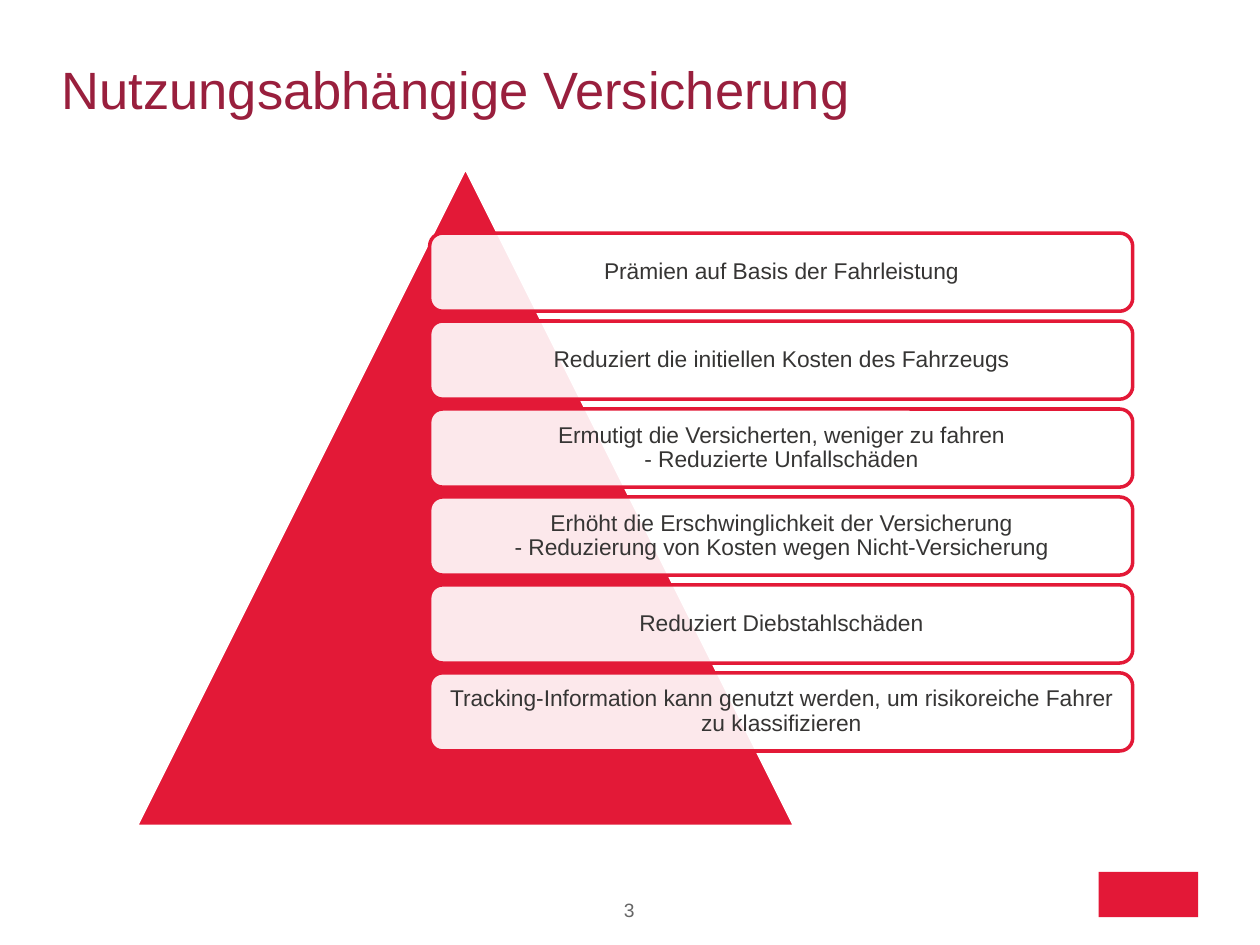
import pptx
import pptx.util
import pptx.dml.color
import pptx.enum.shapes
import pptx.enum.text
import pptx.oxml
import pptx.oxml.ns

Inches = pptx.util.Inches
Pt = pptx.util.Pt
SHAPE = pptx.enum.shapes.MSO_SHAPE
ALIGN = pptx.enum.text.PP_ALIGN
ANCHOR = pptx.enum.text.MSO_ANCHOR

COLORS = {
    "title": "991F3D",
    "red": "E31937",
    "logo": "E31837",
    "white": "FFFFFF",
    "text": "363534",
    "number": "666666",
}

BENEFITS = [
    ["Prämien auf Basis der Fahrleistung"],
    ["Reduziert die initiellen Kosten des Fahrzeugs"],
    ["Ermutigt die Versicherten, weniger zu fahren",
     "- Reduzierte Unfallschäden"],
    ["Erhöht die Erschwinglichkeit der Versicherung",
     "- Reduzierung von Kosten wegen Nicht-Versicherung"],
    ["Reduziert Diebstahlschäden"],
    ["Tracking-Information kann genutzt werden, um risikoreiche Fahrer zu klassifizieren"],
]


def rgb(name):
    """Return the named colour."""
    return pptx.dml.color.RGBColor.from_string(COLORS[name])


def set_text(sp, lines, size, color, align, inset=0, anchor=ANCHOR.MIDDLE, wrap=True):
    """Fill a shape with one paragraph of lines and return the paragraph."""
    tf = sp.text_frame
    tf.auto_size = pptx.enum.text.MSO_AUTO_SIZE.NONE
    tf.word_wrap = wrap
    tf.vertical_anchor = anchor
    tf.margin_left = tf.margin_top = tf.margin_right = tf.margin_bottom = Inches(inset)
    p = tf.paragraphs[0]
    p.alignment = align
    for i, line in enumerate(lines):
        if i:
            p.add_line_break()
        r = p.add_run()
        r.text = line
        r.font.name = "Arial"
        r.font.size = Pt(size)
        r.font.color.rgb = rgb(color)
    return p


def add_filled(s, kind, box, fill, line=None):
    """Add a preset shape with a solid fill and an optional outline."""
    sp = s.shapes.add_shape(kind, *map(Inches, box))
    sp.shadow.inherit = False
    sp.fill.solid()
    sp.fill.fore_color.rgb = rgb(fill)
    if line:
        sp.line.color.rgb = rgb(line)
        sp.line.width = Pt(2)
    else:
        sp.line.fill.background()
    return sp


def set_alpha(sp, percent):
    """Give a solid fill the stated opacity."""
    color = sp.fill._xPr.find(".//" + pptx.oxml.ns.qn("a:srgbClr"))
    alpha = pptx.oxml.parse_xml(
        f'<a:alpha {pptx.oxml.ns.nsdecls("a")} val="{percent * 1000}"/>')
    color.append(alpha)


def add_title(s, box):
    """Place the slide title in its placeholder."""
    sp = s.shapes.title
    sp.left, sp.top, sp.width, sp.height = map(Inches, box)
    set_text(sp, ["Nutzungsabhängige Versicherung"], 30, "title", ALIGN.LEFT)


def add_pyramid(s, box):
    """Draw the triangle and the stack of benefit boxes over it."""
    left, top, side, height = box
    add_filled(s, SHAPE.ISOSCELES_TRIANGLE, (left, top, side, height), "red", "white")
    first, pitch = top + 0.52, 0.698
    for i, lines in enumerate(BENEFITS):
        sp = add_filled(s, SHAPE.ROUNDED_RECTANGLE,
                        (left + 2.33, first + i * pitch, 5.58, 0.62), "white", "red")
        set_alpha(sp, 90)
        p = set_text(sp, lines, 13, "text", ALIGN.CENTER, inset=0.05)
        p.line_spacing = 0.9


def add_footer(s, number_box, logo_box):
    """Place the page number and a plain block in the logo's place."""
    sp = s.shapes.add_textbox(*map(Inches, number_box))
    set_text(sp, ["3"], 11, "number", ALIGN.CENTER, anchor=ANCHOR.TOP, wrap=False)
    add_filled(s, SHAPE.RECTANGLE, logo_box, "logo")


def main():
    """Build and save the slide."""
    prs = pptx.Presentation()
    prs.slide_width, prs.slide_height = Inches(10), Inches(7.5)
    s = prs.slides.add_slide(prs.slide_layouts[5])
    add_title(s, (0.49, 0.2, 9.01, 1.01))
    add_footer(s, (4.57, 7.13, 0.85, 0.26), (8.72, 6.92, 0.79, 0.36))
    add_pyramid(s, (1.08, 1.33, 5.23, 5.23))
    prs.save("out.pptx")


if __name__ == "__main__":
    main()
